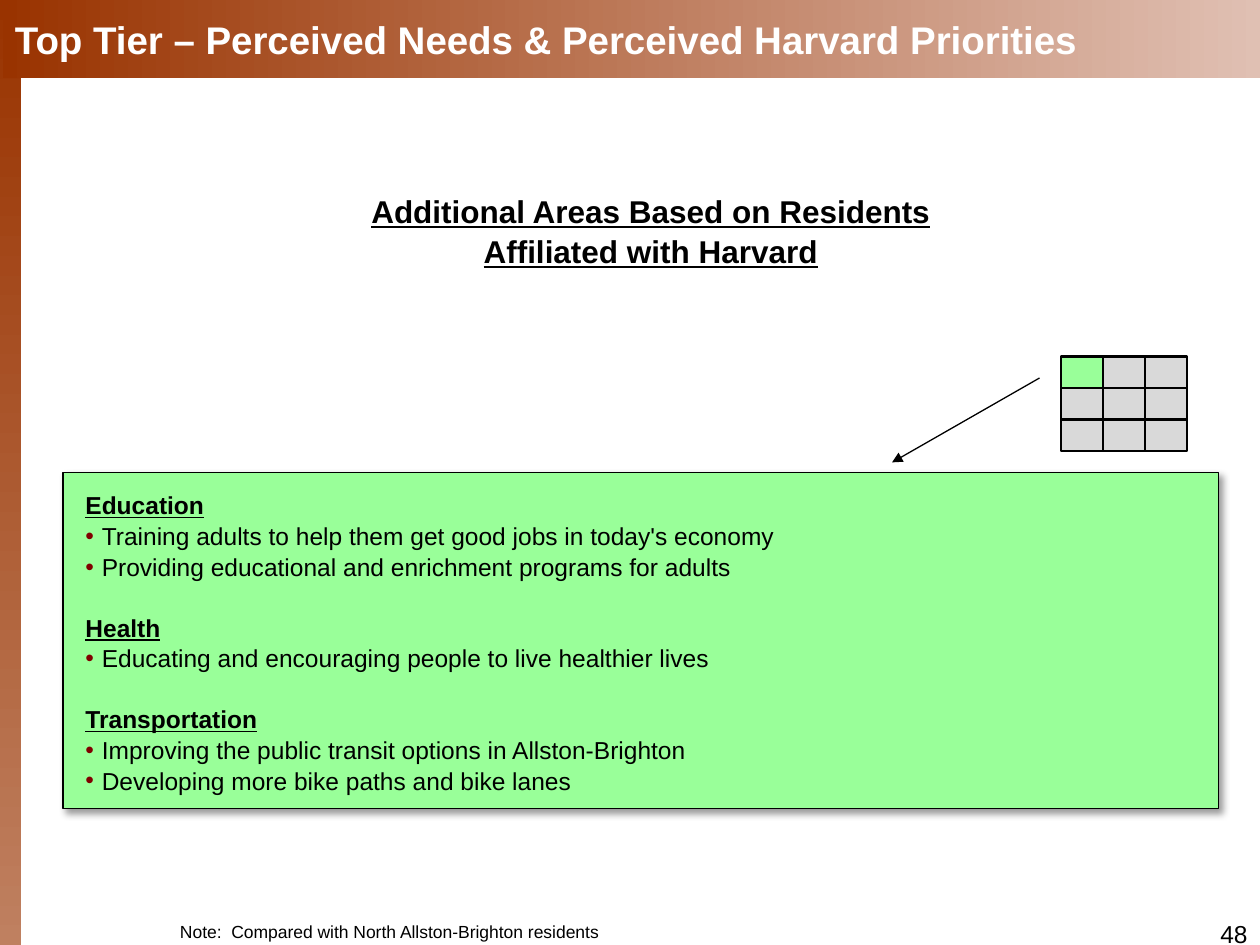
from dataclasses import dataclass

from lxml import etree
from pptx import Presentation
from pptx import util as u
from pptx.dml.color import RGBColor
from pptx.enum import shapes, text
from pptx.oxml import parse_xml
from pptx.oxml.ns import nsdecls, qn

BLACK = RGBColor(0x00, 0x00, 0x00)
WHITE = RGBColor(0xFF, 0xFF, 0xFF)
RUST = RGBColor(0x99, 0x33, 0x00)
CLAY = RGBColor(0xBF, 0x80, 0x60)
BLUSH = RGBColor(0xE0, 0xC0, 0xB3)
GREEN = RGBColor(0x99, 0xFF, 0x99)
GRAY = RGBColor(0xD9, 0xD9, 0xD9)
MAROON = RGBColor(0x80, 0x00, 0x00)

FONT = "Arial"
LINE_SPACING = 1.05
TOPIC_GAP = u.Pt(17)
BULLET_INDENT = u.Inches(0.13)
GRID_SIZE = 3


@dataclass(frozen=True)
class Area:
    left: float
    top: float
    width: float
    height: float

    def lengths(self) -> tuple:
        return tuple(u.Inches(n) for n in (self.left, self.top, self.width, self.height))


@dataclass(frozen=True)
class Style:
    size: float
    color: RGBColor = BLACK
    bold: bool = False
    underline: bool = False


@dataclass(frozen=True)
class Label:
    area: Area
    wording: str
    style: Style
    align: text.PP_ALIGN = text.PP_ALIGN.LEFT


@dataclass(frozen=True)
class Topic:
    heading: str
    points: tuple


HEADING = Style(14, bold=True, underline=True)
POINT = Style(14)

LABELS = (
    Label(Area(7.67, 7.23, 2.33, 0.27), "48", Style(14), text.PP_ALIGN.RIGHT),
    Label(Area(2.5, 1.46, 5.33, 0.71),
          "Additional Areas Based on Residents Affiliated with Harvard",
          Style(18, bold=True, underline=True), text.PP_ALIGN.CENTER),
    Label(Area(1.33, 7.25, 8.08, 0.25),
          "Note:  Compared with North Allston-Brighton residents", Style(10)),
)

TOPICS = (
    Topic("Education", (
        "Training adults to help them get good jobs in today's economy",
        "Providing educational and enrichment programs for adults")),
    Topic("Health", (
        "Educating and encouraging people to live healthier lives",)),
    Topic("Transportation", (
        "Improving the public transit options in Allston-Brighton",
        "Developing more bike paths and bike lanes")),
)


def add_span(para, wording: str, style: Style) -> None:
    span = para.add_run()
    span.text = wording
    span.font.name = FONT
    span.font.size = u.Pt(style.size)
    span.font.color.rgb = style.color
    span.font.bold = style.bold
    span.font.underline = style.underline


def add_rect(parent, area: Area):
    rect = parent.add_shape(shapes.MSO_SHAPE.RECTANGLE, *area.lengths())
    rect.shadow.inherit = False
    return rect


def add_gradient_bar(page, area: Area, end: RGBColor, angle: float):
    bar = add_rect(page.shapes, area)
    bar.fill.gradient()
    bar.fill.gradient_angle = angle
    for stop, color in zip(bar.fill.gradient_stops, (RUST, end)):
        stop.color.rgb = color
    bar.line.fill.background()
    return bar


def add_outlined_rect(parent, area: Area, fill: RGBColor, weight: float):
    rect = add_rect(parent, area)
    rect.fill.solid()
    rect.fill.fore_color.rgb = fill
    rect.line.color.rgb = BLACK
    rect.line.width = u.Pt(weight)
    return rect


def add_drop_shadow(shape) -> None:
    effects = shape._element.spPr.find(qn("a:effectLst"))
    effects.append(parse_xml(
        f'<a:outerShdw {nsdecls("a")} blurRad="{u.Pt(4)}" dist="{u.Pt(3)}" '
        'dir="2700000" algn="tl" rotWithShape="0"><a:srgbClr val="000000">'
        '<a:alpha val="40000"/></a:srgbClr></a:outerShdw>'))


def add_frame(page, area: Area):
    frame = page.shapes.add_textbox(*area.lengths()).text_frame
    frame.word_wrap = True
    return frame


def add_label(page, label: Label) -> None:
    para = add_frame(page, label.area).paragraphs[0]
    para.alignment = label.align
    para.line_spacing = LINE_SPACING
    add_span(para, label.wording, label.style)


def add_bullet(para) -> None:
    props = para._p.get_or_add_pPr()
    props.set("marL", str(BULLET_INDENT))
    props.set("indent", str(-BULLET_INDENT))
    color = etree.SubElement(props, qn("a:buClr"))
    etree.SubElement(color, qn("a:srgbClr")).set("val", str(MAROON))
    etree.SubElement(props, qn("a:buFont")).set("typeface", FONT)
    etree.SubElement(props, qn("a:buChar")).set("char", "•")


def add_topics(page, area: Area) -> None:
    frame = add_frame(page, area)
    for index, topic in enumerate(TOPICS):
        para = frame.add_paragraph() if index else frame.paragraphs[0]
        para.line_spacing = LINE_SPACING
        if index:
            para.space_before = TOPIC_GAP
        add_span(para, topic.heading, HEADING)
        for point in topic.points:
            para = frame.add_paragraph()
            para.line_spacing = LINE_SPACING
            add_bullet(para)
            add_span(para, point, POINT)


def add_arrow(page, start: tuple, end: tuple) -> None:
    arrow = page.shapes.add_connector(
        shapes.MSO_CONNECTOR.STRAIGHT, *(u.Inches(n) for n in start + end))
    arrow.line.color.rgb = BLACK
    arrow.line.width = u.Pt(0.75)
    etree.SubElement(arrow.line._get_or_add_ln(), qn("a:tailEnd")).set("type", "triangle")
    etree.SubElement(arrow._element.spPr, qn("a:effectLst"))


def add_priority_grid(page, area: Area) -> None:
    grid = page.shapes.add_group_shape()
    width, height = area.width / GRID_SIZE, area.height / GRID_SIZE
    for row in range(GRID_SIZE):
        for column in range(GRID_SIZE):
            cell = Area(area.left + column * width, area.top + row * height, width, height)
            fill = GREEN if row == column == 0 else GRAY
            add_outlined_rect(grid.shapes, cell, fill, 1.25)


def main() -> None:
    deck = Presentation()
    deck.slide_width, deck.slide_height = u.Inches(10), u.Inches(7.5)
    page = deck.slides.add_slide(deck.slide_layouts[6])

    # Side bar and topic panel
    add_gradient_bar(page, Area(0, 0, 0.17, 7.5), CLAY, 270)
    add_drop_shadow(add_outlined_rect(page.shapes, Area(0.5, 3.75, 9.17, 2.67), GREEN, 0.75))

    # Title band
    band = add_gradient_bar(page, Area(0.02, 0, 9.98, 0.62), BLUSH, 0)
    band.text_frame.word_wrap = True
    band.text_frame.vertical_anchor = text.MSO_ANCHOR.MIDDLE
    title = band.text_frame.paragraphs[0]
    title.alignment = text.PP_ALIGN.LEFT
    add_span(title, "Top Tier – Perceived Needs & Perceived Harvard Priorities",
             Style(22, WHITE, bold=True))

    # Page number, subtitle, note and topics
    for label in LABELS:
        add_label(page, label)
    add_topics(page, Area(0.58, 3.83, 8.83, 2.69))

    # Arrow from the priority grid to the panel
    add_arrow(page, (8.25, 3), (7.08, 3.67))
    add_priority_grid(page, Area(8.42, 2.83, 1, 0.75))

    deck.save("out.pptx")


if __name__ == "__main__":
    main()
